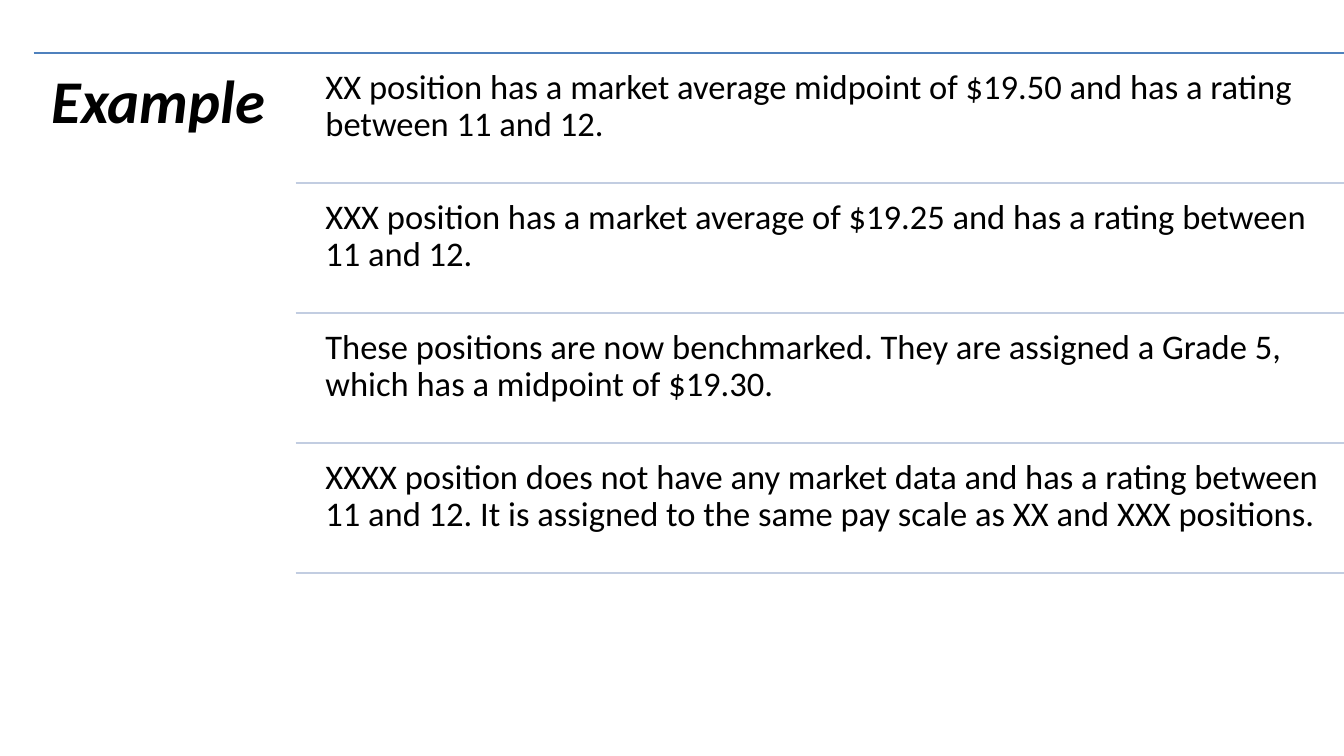
import pptx
import pptx.dml.color
import pptx.enum.shapes
import pptx.enum.text
import pptx.oxml.ns
import pptx.util
from lxml import etree

WIDTH, HEIGHT = 20, 11.25
LEFT, TOP, BOTTOM = 0.5, 0.79, 8.53
COLUMNS = 5
STATEMENTS = [
    "XX position has a market average midpoint of $19.50 and has a rating between 11 and 12.",
    "XXX position has a market average of $19.25 and has a rating between 11 and 12.",
    "These positions are now benchmarked. They are assigned a Grade 5, which has a midpoint of $19.30.",
    "XXXX position does not have any market data and has a rating between 11 and 12. "
    "It is assigned to the same pay scale as XX and XXX positions.",
]


def color(value):
    return pptx.dml.color.RGBColor.from_string(value)


class Sheet:
    """Draws styled rules and texts on a page, placed by grid column and row."""

    font = "Calibri"
    ink = "000000"
    accent = "4F81BD"
    pale = "C2CDE1"
    rule_width = 2

    def __init__(self, page, columns, rows):
        self.page = page
        self.columns = columns
        self.rows = rows
        self.column_width = (WIDTH - LEFT) / columns
        self.row_height = (BOTTOM - TOP) / rows

    def x(self, column):
        return pptx.util.Inches(LEFT + column * self.column_width)

    def y(self, row):
        return pptx.util.Inches(TOP + row * self.row_height)

    def rule(self, column, row, tone):
        line = self.page.shapes.add_connector(
            pptx.enum.shapes.MSO_CONNECTOR.STRAIGHT,
            self.x(column), self.y(row), self.x(self.columns), self.y(row))
        line.line.color.rgb = color(tone)
        line.line.width = pptx.util.Pt(self.rule_width)
        etree.SubElement(line._element.spPr, pptx.oxml.ns.qn("a:effectLst"))

    def text(self, words, column, row, end_column, end_row, size, inset, strong=False):
        left, top = self.x(column), self.y(row)
        box = self.page.shapes.add_textbox(
            left, top, self.x(end_column) - left, self.y(end_row) - top)
        frame = box.text_frame
        frame.text = words
        frame.word_wrap = True
        frame.vertical_anchor = pptx.enum.text.MSO_ANCHOR.TOP
        margin = pptx.util.Inches(inset)
        frame.margin_left = frame.margin_right = margin
        frame.margin_top = frame.margin_bottom = margin
        para = frame.paragraphs[0]
        para.line_spacing = 0.9
        span = para.runs[0]
        span.font.name = self.font
        span.font.size = pptx.util.Pt(size)
        span.font.color.rgb = color(self.ink)
        span.font.bold = span.font.italic = strong


def main():
    deck = pptx.Presentation()
    deck.slide_width = pptx.util.Inches(WIDTH)
    deck.slide_height = pptx.util.Inches(HEIGHT)
    page = deck.slides.add_slide(deck.slide_layouts[6])
    sheet = Sheet(page, COLUMNS, len(STATEMENTS))

    sheet.rule(0, 0, sheet.accent)
    sheet.text("Example", 0, 0, 1, sheet.rows, 65, 0.27, strong=True)
    for row, statement in enumerate(STATEMENTS):
        sheet.text(statement, 1.075, row + 0.05, COLUMNS, row + 1, 37, 0.15)
        sheet.rule(1, row + 1, sheet.pale)

    deck.save("out.pptx")


if __name__ == "__main__":
    main()
